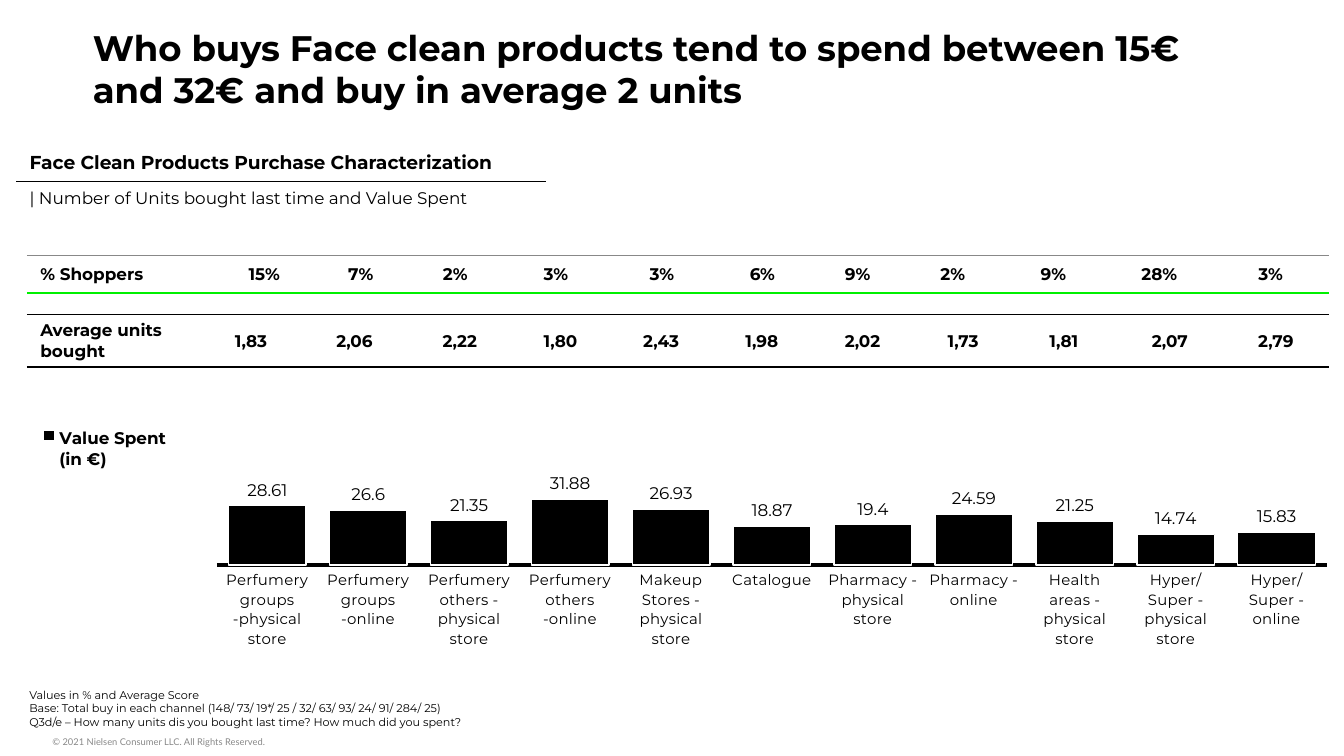
from lxml import etree
from pptx import Presentation
from pptx.chart.data import CategoryChartData
from pptx.dml.color import RGBColor
from pptx.enum.chart import XL_CHART_TYPE as ChartType
from pptx.enum.chart import XL_LABEL_POSITION as LabelPos
from pptx.enum.chart import XL_LEGEND_POSITION as LegendPos
from pptx.enum.chart import XL_TICK_MARK as TickMark
from pptx.enum.text import MSO_ANCHOR as Anchor
from pptx.enum.text import PP_ALIGN as Align
from pptx.oxml import parse_xml
from pptx.oxml.ns import nsdecls, qn
from pptx.util import Inches, Pt

FONT = "Montserrat"
BLACK, WHITE, GREEN, GREY = "000000", "FFFFFF", "00F000", "888888"
NO_STYLE = "{2D5ABB26-0587-4C30-8999-92F81FD0307C}"
CHANNELS = {
    "Perfumery groups -physical store": 28.61,
    "Perfumery groups -online": 26.6,
    "Perfumery others - physical store": 21.35,
    "Perfumery others -online": 31.88,
    "Makeup Stores - physical store": 26.93,
    "Catalogue": 18.87,
    "Pharmacy - physical store": 19.4,
    "Pharmacy - online": 24.59,
    "Health areas - physical store": 21.25,
    "Hyper/Super - physical store": 14.74,
    "Hyper/Super - online": 15.83,
}
SHOPPERS = ["% Shoppers", "15%", "7%", "2%", "3%", "3%", "6%", "9%", "2%", "9%", "28%", "3%"]
SHOPPER_COLS = [1.4, 0.74, 0.7, 0.71, 0.79, 0.79, 0.71, 0.71, 0.71, 0.79, 0.79, 0.87]
UNITS = ["Average units bought", "1,83", "2,06", "2,22", "1,80", "2,43", "1,98",
         "2,02", "1,73", "1,81", "2,07", "2,79"]
UNIT_COLS = [1.29, 0.76, 0.78, 0.79, 0.71, 0.79, 0.71, 0.79, 0.71, 0.79, 0.79, 0.79]


def rgb(value):
    """Return the colour for a hex string."""
    return RGBColor.from_string(value)


def style_font(font, size, color=BLACK, name=FONT, bold=False):
    """Format a font."""
    font.size, font.name, font.bold = Pt(size), name, bold
    font.color.rgb = rgb(color)


def write(tf, text, align=Align.LEFT, anchor=Anchor.TOP, insets=(0.1, 0.05, 0.1, 0.05), **fmt):
    """Fill a text frame or cell with one formatted paragraph per line."""
    frame = getattr(tf, "text_frame", tf)
    frame.word_wrap = True
    tf.vertical_anchor = anchor
    tf.margin_left, tf.margin_top, tf.margin_right, tf.margin_bottom = map(Inches, insets)
    for i, line in enumerate(text.split("\n")):
        p = frame.add_paragraph() if i else frame.paragraphs[0]
        p.alignment = align
        r = p.add_run()
        r.text = line
        style_font(r.font, **fmt)


def add_note(slide, box, text, **fmt):
    """Add a text box."""
    write(slide.shapes.add_textbox(*map(Inches, box)).text_frame, text, **fmt)


def add_title(slide, box, text):
    """Place and format the title placeholder."""
    sp = slide.shapes.title
    sp.left, sp.top, sp.width, sp.height = map(Inches, box)
    write(sp.text_frame, text, size=19, bold=True)


def set_border(cell, side, color, width):
    """Draw one side of a cell, T or B."""
    cell._tc.get_or_add_tcPr().append(parse_xml(
        f'<a:ln{side} {nsdecls("a")} w="{Pt(width)}"><a:solidFill>'
        f'<a:srgbClr val="{color}"/></a:solidFill></a:ln{side}>'))


def add_plain_table(slide, box, cols, rows):
    """Add an unstyled table whose columns share the box width in proportion."""
    table = slide.shapes.add_table(len(rows), len(cols), *map(Inches, box)).table
    table.first_row = table.horz_banding = False
    table._tbl.tblPr.find(qn("a:tableStyleId")).text = NO_STYLE
    for col, width in zip(table.columns, cols):
        col.width = Inches(width * box[2] / sum(cols))
    for row, height in zip(table.rows, rows):
        row.height = Inches(height)
    return table


def add_heading(slide, box):
    """Add the underlined section heading and its subtitle."""
    table = add_plain_table(slide, box, [box[2]], [0.27, 0.25])
    head, sub = table.cell(0, 0), table.cell(1, 0)
    write(head, "Face Clean Products Purchase Characterization", size=10, bold=True)
    write(sub, "| Number of Units bought last time and Value Spent", size=9)
    set_border(head, "B", BLACK, 1)
    set_border(sub, "T", BLACK, 1)
    for cell in (head, sub):
        cell.fill.background()


def add_metric_row(slide, box, cols, values, top, bottom):
    """Add a one-row table with a label followed by a figure per channel."""
    table = add_plain_table(slide, box, cols, [box[3]])
    for i, value in enumerate(values):
        cell = table.cell(0, i)
        write(cell, value, size=9, bold=True, anchor=Anchor.MIDDLE,
              align=Align.CENTER if i else Align.LEFT,
              insets=(0.01, 0.01, 0.01, 0) if i else (0.1, 0.04, 0.1, 0.04))
        set_border(cell, "T", *top)
        set_border(cell, "B", *bottom)
        cell.fill.background()


def set_layout(parent, index, inner=False, **fractions):
    """Give a chart part a manual position in fractions of the chart."""
    for old in parent.findall(qn("c:layout")):
        parent.remove(old)
    layout = etree.Element(qn("c:layout"))
    manual = etree.SubElement(layout, qn("c:manualLayout"))
    if inner:
        etree.SubElement(manual, qn("c:layoutTarget"), val="inner")
    for mode in ("xMode", "yMode"):
        etree.SubElement(manual, qn(f"c:{mode}"), val="edge")
    for key, value in fractions.items():
        etree.SubElement(manual, qn(f"c:{key}"), val=str(value))
    parent.insert(index, layout)


def add_spend_chart(slide, box):
    """Add the column chart of value spent per channel."""
    data = CategoryChartData()
    data.categories = list(CHANNELS)
    data.add_series("Value Spent (in €)", list(CHANNELS.values()))
    chart = slide.shapes.add_chart(ChartType.COLUMN_CLUSTERED, *map(Inches, box), data).chart
    style_font(chart.font, 10, name="Roboto")
    chart.has_title = False

    chart.has_legend = True
    legend = chart.legend
    legend.position, legend.include_in_layout = LegendPos.LEFT, False
    style_font(legend.font, 9, bold=True)
    set_layout(legend._element, 1, x=0.01, y=0.22, w=0.1, h=0.18)
    set_layout(chart._chartSpace.chart.plotArea, 0, inner=True, x=0.146, y=0.035, w=0.853, h=0.631)

    values = chart.value_axis
    values.minimum_scale, values.maximum_scale = 0, 100
    values.has_major_gridlines = values.visible = False
    channels = chart.category_axis
    channels.major_tick_mark = channels.minor_tick_mark = TickMark.NONE
    channels.tick_labels.offset = 0
    style_font(channels.tick_labels.font, 8)
    channels.format.line.color.rgb = rgb(BLACK)
    channels.format.line.width = Pt(2.25)

    plot = chart.plots[0]
    plot.gap_width, plot.vary_by_categories = 30, False
    bars = plot.series[0]
    bars.format.fill.solid()
    bars.format.fill.fore_color.rgb = rgb(BLACK)
    bars.format.line.color.rgb = rgb(WHITE)
    bars.format.line.width = Pt(0.75)
    labels = bars.data_labels
    labels.show_value, labels.position = True, LabelPos.OUTSIDE_END
    style_font(labels.font, 9)


def main():
    """Build the slide and save it."""
    prs = Presentation()
    prs.slide_width = Inches(10)
    prs.slide_height = prs.slide_width * 9 // 16
    slide = prs.slides.add_slide(prs.slide_layouts[5])
    add_note(slide, (0.39, 5.43, 5.54, 0.2), "© 2021 Nielsen Consumer LLC. All Rights Reserved.",
             size=5, name="Lato", color=GREY, insets=(0, 0.05, 0, 0.05))
    add_spend_chart(slide, (0.2, 2.58, 9.69, 2.44))
    add_note(slide, (0.12, 5.07, 4.96, 0.4),
             "Values in % and Average Score\n"
             "Base: Total buy in each channel (148/ 73/ 19*/ 25 / 32/ 63/ 93/ 24/ 91/ 284/ 25)\n"
             "Q3d/e – How many units dis you bought last time? How much did you spent?", size=6)
    add_metric_row(slide, (0.2, 1.9, 9.69, 0.28), SHOPPER_COLS, SHOPPERS, (GREY, 0.5), (GREEN, 1))
    add_heading(slide, (0.12, 1.08, 3.94, 0.52))
    add_metric_row(slide, (0.2, 2.34, 9.69, 0.39), UNIT_COLS, UNITS, (BLACK, 1), (BLACK, 1))
    add_title(slide, (0.59, 0.14, 8.86, 0.74),
              "Who buys Face clean products tend to spend between 15€ and 32€ "
              "and buy in average 2 units")
    prs.save("out.pptx")


if __name__ == "__main__":
    main()
